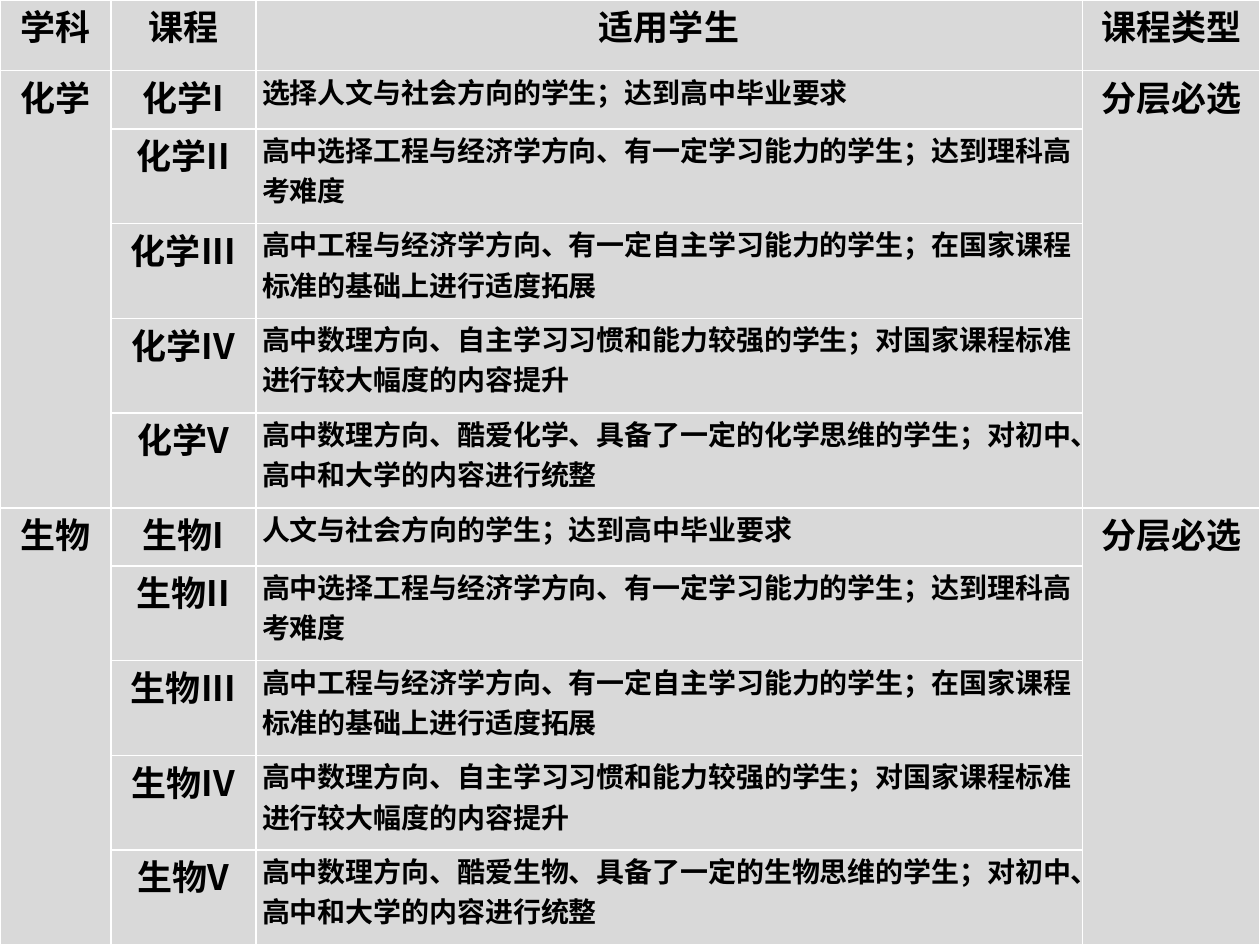
from dataclasses import dataclass

from lxml.etree import SubElement
from pptx import Presentation
from pptx.dml.color import RGBColor as RGB
from pptx.enum.text import PP_ALIGN as Align
from pptx.oxml.ns import qn
from pptx.table import Table, _Cell as Cell
from pptx.util import Inches, Pt


@dataclass(frozen=True)
class Theme:
    font: str = "Noto Sans CJK SC"
    ink: str = "000000"
    fill: str = "D9D9D9"
    border: str = "FFFFFF"
    border_pt: float = 1
    label_pt: int = 20
    body_pt: int = 16
    inset: float = 0.05


@dataclass(frozen=True)
class Subject:
    name: str
    entry: str
    kind: str = "分层必选"


THEME = Theme()
WIDTH, HEIGHT = 10, 7.5
COLUMNS = (0.88, 1.15, 6.56, 1.41)
HEADER_ROW, SHORT_ROW, TALL_ROW = 0.56, 0.46, 0.75
HEADINGS = ("学科", "课程", "适用学生", "课程类型")
SUBJECTS = (
    Subject("化学", "选择人文与社会方向的学生；达到高中毕业要求"),
    Subject("生物", "人文与社会方向的学生；达到高中毕业要求"),
)
LEVELS = ("I", "II", "III", "IV", "V")
UPPER_LEVELS = (
    "高中选择工程与经济学方向、有一定学习能力的学生；达到理科高考难度",
    "高中工程与经济学方向、有一定自主学习能力的学生；在国家课程标准的基础上进行适度拓展",
    "高中数理方向、自主学习习惯和能力较强的学生；对国家课程标准进行较大幅度的内容提升",
    "高中数理方向、酷爱{name}、具备了一定的{name}思维的学生；对初中、高中和大学的内容进行统整",
)


def style_cell(cell: Cell) -> None:
    tc_pr = cell._tc.get_or_add_tcPr()
    for side in ("lnL", "lnR", "lnT", "lnB"):
        ln = SubElement(tc_pr, qn(f"a:{side}"), w=str(Pt(THEME.border_pt)))
        SubElement(SubElement(ln, qn("a:solidFill")), qn("a:srgbClr"), val=THEME.border)
    cell.fill.solid()
    cell.fill.fore_color.rgb = RGB.from_string(THEME.fill)
    cell.margin_left = cell.margin_right = Inches(THEME.inset)
    cell.margin_top = cell.margin_bottom = 0


def write(cell: Cell, text: str, size: int = THEME.label_pt, align: Align = Align.CENTER) -> None:
    p = cell.text_frame.paragraphs[0]
    p.text = text
    p.alignment = align
    font = p.font
    font.name, font.size, font.bold = THEME.font, Pt(size), True
    font.color.rgb = RGB.from_string(THEME.ink)
    latin = next(p._p.iter(qn("a:latin")))
    SubElement(latin.getparent(), qn("a:ea"), typeface=THEME.font)


def write_subject(table: Table, top: int, subject: Subject) -> None:
    bottom = top + len(LEVELS) - 1
    for col, text in ((0, subject.name), (3, subject.kind)):
        table.cell(top, col).merge(table.cell(bottom, col))
        write(table.cell(top, col), text)
    audiences = (subject.entry, *UPPER_LEVELS)
    for row, (level, audience) in enumerate(zip(LEVELS, audiences), top):
        write(table.cell(row, 1), subject.name + level)
        write(table.cell(row, 2), audience.format(name=subject.name), THEME.body_pt, Align.LEFT)


def main() -> None:
    prs = Presentation()
    prs.slide_width, prs.slide_height = Inches(WIDTH), Inches(HEIGHT)
    slide = prs.slides.add_slide(prs.slide_layouts[6])

    rows = [HEADER_ROW] + [SHORT_ROW, *[TALL_ROW] * len(UPPER_LEVELS)] * len(SUBJECTS)
    frame = slide.shapes.add_table(
        len(rows), len(COLUMNS), 0, 0, prs.slide_width, prs.slide_height
    )
    table = frame.table
    for column, share in zip(table.columns, COLUMNS):
        column.width = int(prs.slide_width * share / sum(COLUMNS))
    for row, share in zip(table.rows, rows):
        row.height = int(prs.slide_height * share / sum(rows))
    for cell in table.iter_cells():
        style_cell(cell)

    for col, heading in enumerate(HEADINGS):
        write(table.cell(0, col), heading)
    for i, subject in enumerate(SUBJECTS):
        write_subject(table, 1 + i * len(LEVELS), subject)

    prs.save("out.pptx")


if __name__ == "__main__":
    main()
